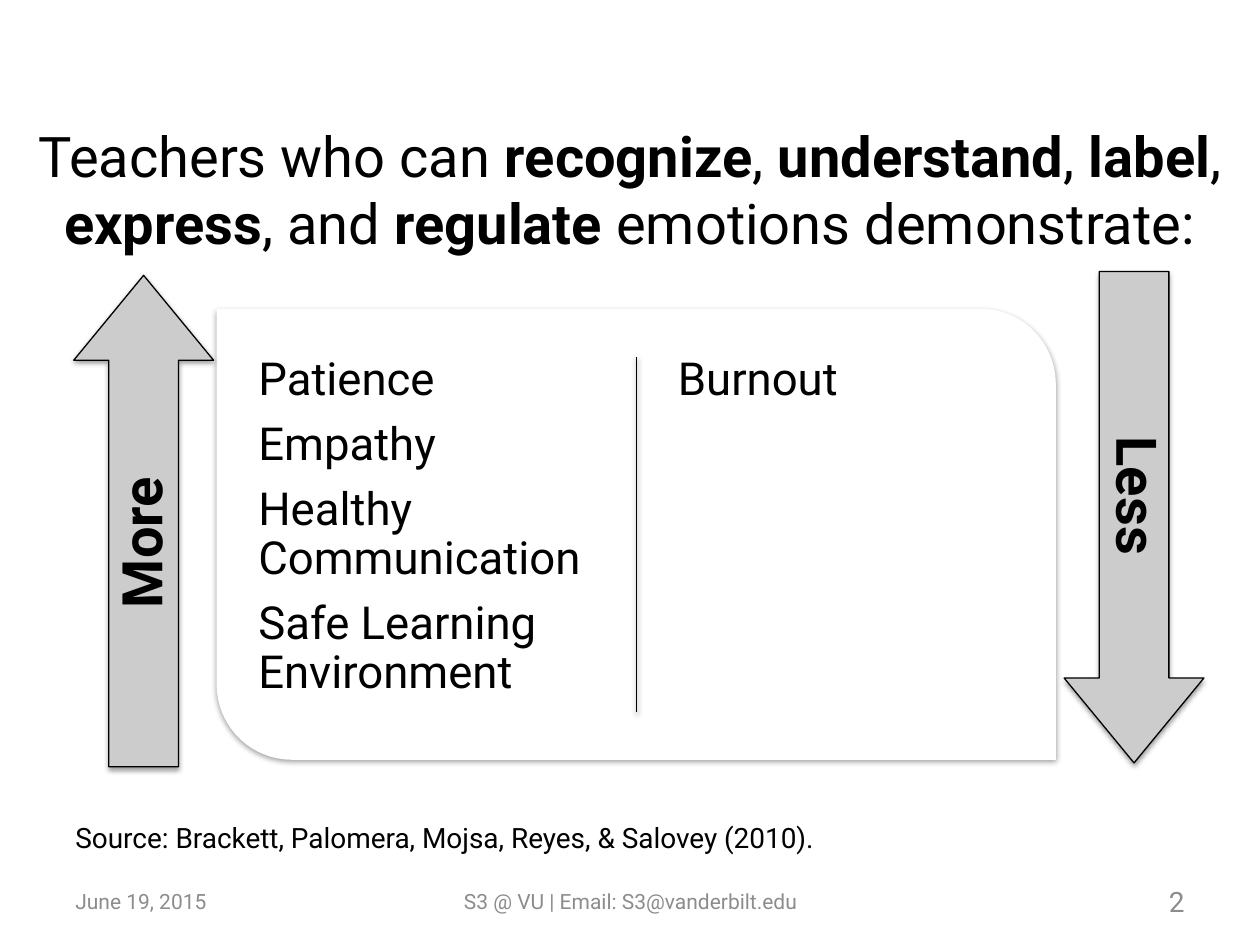
"""Build a slide on what emotionally skilled teachers show more and less of."""
from lxml import etree
from pptx import Presentation
from pptx.dml.color import RGBColor
from pptx.enum.shapes import MSO_CONNECTOR, MSO_SHAPE
from pptx.enum.text import MSO_ANCHOR, PP_ALIGN
from pptx.oxml.ns import qn
from pptx.util import Inches, Pt

LEFT, CENTER, RIGHT = PP_ALIGN.LEFT, PP_ALIGN.CENTER, PP_ALIGN.RIGHT
TOP, MIDDLE = MSO_ANCHOR.TOP, MSO_ANCHOR.MIDDLE
BLACK = RGBColor(0x00, 0x00, 0x00)
WHITE = RGBColor(0xFF, 0xFF, 0xFF)
ARROW_GRAY = RGBColor(0xCC, 0xCC, 0xCC)
FOOTER_GRAY = RGBColor(0x8C, 0x8C, 0x8C)
FONT = "Roboto"

TITLE = [
    ("Teachers who can ", False), ("recognize", True), (", ", False),
    ("understand", True), (", ", False), ("label", True), (", ", False),
    ("express", True), (", and ", False), ("regulate", True),
    (" emotions demonstrate:", False),
]
COLUMNS = [
    (1.94, ["Patience", "Empathy", "Healthy Communication", "Safe Learning Environment"]),
    (5.27, ["Burnout"]),
]
ARROWS = [
    ("More", 270, (-0.81, 3.58), (-0.64, 4.03)),
    ("Less", 90, (7.05, 3.55), (7.22, 3.66)),
]
SOURCE = "Source: Brackett, Palomera, Mojsa, Reyes, & Salovey (2010)."
FOOTERS = [
    ("June 19, 2015", 0.5, 2.33, 12, LEFT),
    ("S3 @ VU | Email: S3@vanderbilt.edu", 3.42, 3.17, 12, CENTER),
    ("2", 7.17, 2.33, 16, RIGHT),
]


def box(s, at, paragraphs, size, color=BLACK, align=LEFT, anchor=TOP,
        inset=None, spacing=None, after=None, rotation=0):
    sp = s.shapes.add_textbox(*map(Inches, at))
    sp.rotation = rotation
    tf = sp.text_frame
    tf.word_wrap = True
    tf.vertical_anchor = anchor
    if inset is not None:
        tf.margin_left = tf.margin_top = tf.margin_right = tf.margin_bottom = Inches(inset)
    for i, runs in enumerate(paragraphs):
        p = tf.add_paragraph() if i else tf.paragraphs[0]
        p.alignment = align
        p.line_spacing = spacing
        p.space_after = after
        for text, bold in runs:
            r = p.add_run()
            r.text = text
            r.font.name = FONT
            r.font.size = Pt(size)
            r.font.bold = bold
            r.font.color.rgb = color


def add_shadow(sp):
    effects = etree.SubElement(sp._element.spPr, qn("a:effectLst"))
    shadow = etree.SubElement(effects, qn("a:outerShdw"), blurRad=str(Pt(3.1)),
                              dist=str(Pt(1.6)), dir="5400000", rotWithShape="0")
    color = etree.SubElement(shadow, qn("a:srgbClr"), val=str(BLACK))
    etree.SubElement(color, qn("a:alpha"), val="38000")


def outline(sp):
    sp.line.color.rgb = BLACK
    sp.line.width = Pt(0.75)


def shape(s, kind, at, fill, adjustments):
    sp = s.shapes.add_shape(kind, *map(Inches, at))
    for i, value in enumerate(adjustments):
        sp.adjustments[i] = value
    sp.fill.solid()
    sp.fill.fore_color.rgb = fill
    return sp


def main():
    prs = Presentation()
    prs.slide_width, prs.slide_height = Inches(10), Inches(7.5)
    s = prs.slides.add_slide(prs.slide_layouts[6])

    for text, left, width, size, align in FOOTERS:
        box(s, (left, 6.95, width, 0.4), [[(text, False)]], size, FOOTER_GRAY, align, MIDDLE)

    card = shape(s, MSO_SHAPE.ROUND_2_DIAG_RECTANGLE, (1.72, 2.45, 6.66, 3.58),
                 WHITE, (0, 0.167))
    card.line.fill.background()
    add_shadow(card)

    divider = s.shapes.add_connector(MSO_CONNECTOR.STRAIGHT,
                                     *map(Inches, (5.05, 2.83, 5.05, 5.65)))
    outline(divider)
    add_shadow(divider)

    for left, items in COLUMNS:
        box(s, (left, 2.72, 2.88, 3.04), [[(item, False)] for item in items], 26,
            inset=0.11, spacing=0.9, after=Pt(9))

    for label, rotation, arrow_at, label_at in ARROWS:
        arrow = shape(s, MSO_SHAPE.RIGHT_ARROW, (*arrow_at, 3.9, 1.11),
                      ARROW_GRAY, (0.498, 0.607))
        arrow.rotation = rotation
        outline(arrow)
        add_shadow(arrow)
        box(s, (*label_at, 3.57, 0.55), [[(label, True)]], 32, align=CENTER,
            anchor=MIDDLE, inset=0.13, spacing=0.9, rotation=rotation)

    box(s, (0.5, 6.46, 9.21, 0.37), [[(SOURCE, False)]], 16)
    box(s, (0, 0.87, 10, 1.25), [TITLE], 32, align=CENTER, anchor=MIDDLE)
    prs.save("out.pptx")


if __name__ == "__main__":
    main()
